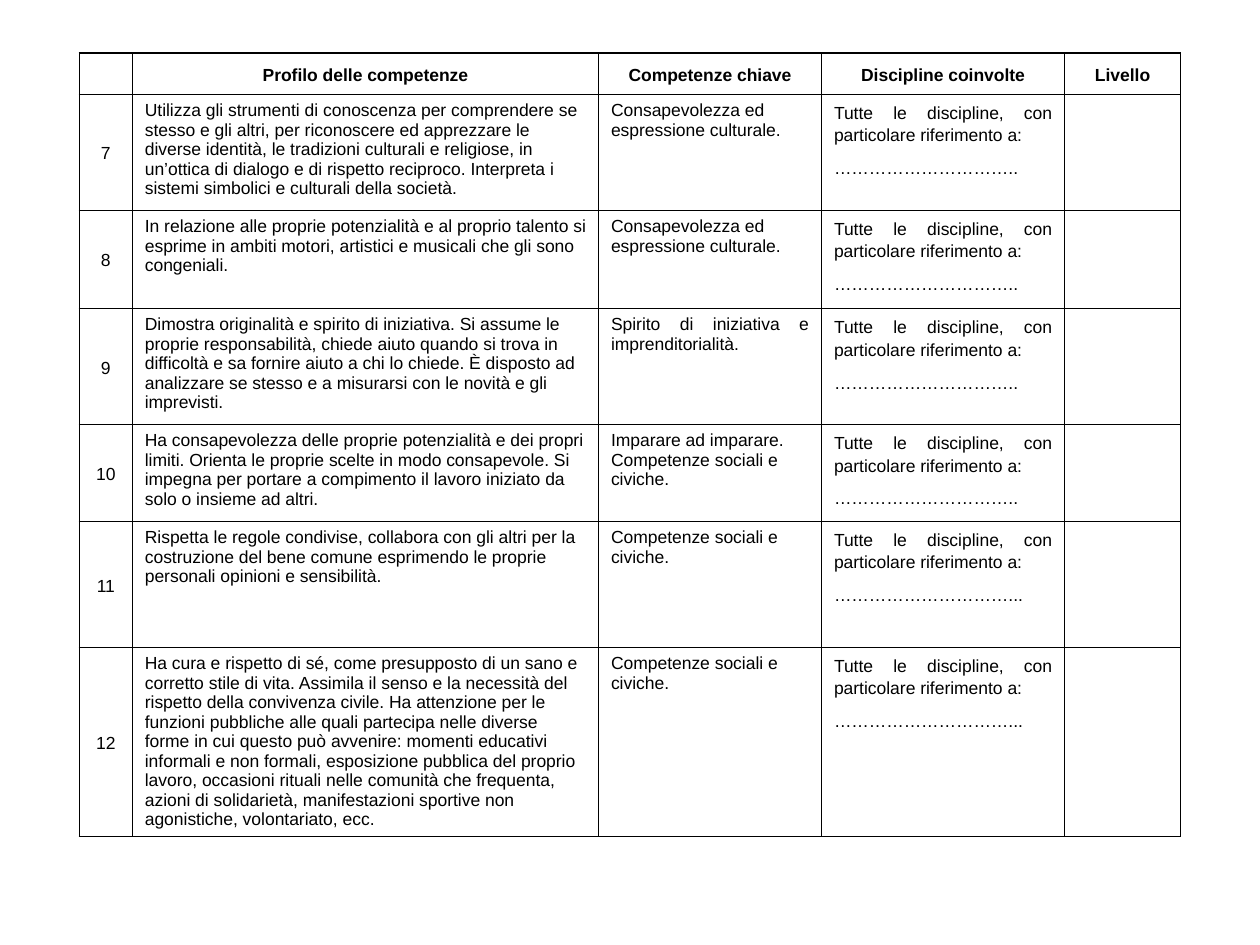
from pptx import Presentation
from pptx.dml.color import RGBColor
from pptx.enum.text import MSO_ANCHOR as ANCHOR, PP_ALIGN as ALIGN
from pptx.oxml.ns import qn
from pptx.util import Inches, Pt
from lxml.etree import SubElement

BLACK = "000000"
COLS = [0.42, 3.7, 1.77, 1.93, 0.92]
ROWS = [0.33, 0.92, 0.78, 0.92, 0.77, 1, 1.5]
HEADERS = ["", "Profilo delle competenze", "Competenze chiave",
           "Discipline coinvolte", "Livello"]
DISCIPLINES = "Tutte le discipline, con particolare riferimento a:"
DOTS = "………………………….."
LONG_DOTS = "…………………………..."
CULTURE = "Consapevolezza ed espressione culturale."
CIVICS = "Competenze sociali e civiche."
FIRST_NUMBER = 7
PROFILES = [
    ("Utilizza gli strumenti di conoscenza per comprendere se stesso e gli altri, "
     "per riconoscere ed apprezzare le diverse identità, le tradizioni culturali e "
     "religiose, in un’ottica di dialogo e di rispetto reciproco. Interpreta i "
     "sistemi simbolici e culturali della società.",
     CULTURE, ALIGN.LEFT, DOTS),
    ("In relazione alle proprie potenzialità e al proprio talento si esprime in "
     "ambiti motori, artistici e musicali che gli sono congeniali.",
     CULTURE, ALIGN.LEFT, DOTS),
    ("Dimostra originalità e spirito di iniziativa. Si assume le proprie "
     "responsabilità, chiede aiuto quando si trova in difficoltà e sa fornire aiuto "
     "a chi lo chiede. È disposto ad analizzare se stesso e a misurarsi con le "
     "novità e gli imprevisti.",
     "Spirito di iniziativa e imprenditorialità.", ALIGN.JUSTIFY, DOTS),
    ("Ha consapevolezza delle proprie potenzialità e dei propri limiti. Orienta le "
     "proprie scelte in modo consapevole. Si impegna per portare a compimento il "
     "lavoro iniziato da solo o insieme ad altri.",
     "Imparare ad imparare. " + CIVICS, ALIGN.LEFT, DOTS),
    ("Rispetta le regole condivise, collabora con gli altri per la costruzione del "
     "bene comune esprimendo le proprie personali opinioni e sensibilità.",
     CIVICS, ALIGN.LEFT, LONG_DOTS),
    ("Ha cura e rispetto di sé, come presupposto di un sano e corretto stile di "
     "vita. Assimila il senso e la necessità del rispetto della convivenza civile. "
     "Ha attenzione per le funzioni pubbliche alle quali partecipa nelle diverse "
     "forme in cui questo può avvenire: momenti educativi informali e non formali, "
     "esposizione pubblica del proprio lavoro, occasioni rituali nelle comunità che "
     "frequenta, azioni di solidarietà, manifestazioni sportive non agonistiche, "
     "volontariato, ecc.",
     CIVICS, ALIGN.LEFT, LONG_DOTS),
]


def rgb(color):
    return RGBColor.from_string(color)


def set_borders(cell, color=BLACK, width=1):
    tc_pr = cell._tc.get_or_add_tcPr()
    for side in ("a:lnL", "a:lnR", "a:lnT", "a:lnB"):
        ln = SubElement(tc_pr, qn(side), w=str(Pt(width)))
        fill = SubElement(ln, qn("a:solidFill"))
        SubElement(fill, qn("a:srgbClr"), val=color)


def write_cell(cell, lines, align=ALIGN.LEFT, spacing=1.0, bold=False,
               anchor=ANCHOR.TOP):
    cell.vertical_anchor = anchor
    tf = cell.text_frame
    tf.text = "\n".join(lines)
    for i, p in enumerate(tf.paragraphs):
        p.alignment = align
        p.line_spacing = spacing
        p.space_before = Pt(6 if i else 0)
        p.font.name = "Arial"
        p.font.size = Pt(10)
        p.font.bold = bold
        p.font.color.rgb = rgb(BLACK)


def write_centred(cell, text, bold=False):
    write_cell(cell, [text], ALIGN.CENTER, 1.15, bold, ANCHOR.MIDDLE)


def add_grid(slide):
    table = slide.shapes.add_table(
        len(ROWS), len(COLS), Inches(0.63), Inches(0.42),
        Inches(sum(COLS)), Inches(sum(ROWS))).table
    table.first_row = table.horz_banding = False
    for column, width in zip(table.columns, COLS):
        column.width = Inches(width)
    for row, height in zip(table.rows, ROWS):
        row.height = Inches(height)
    for cell in table.iter_cells():
        set_borders(cell)
        cell.fill.background()
        cell.margin_top = cell.margin_bottom = Inches(0.05)
    return table


def fill_header(table):
    for cell, text in zip(table.rows[0].cells, HEADERS):
        if text:
            write_centred(cell, text, bold=True)
        else:
            cell.margin_top = cell.margin_bottom = 0


def fill_profiles(table):
    for i, (profile, key, key_align, dots) in enumerate(PROFILES):
        cells = table.rows[i + 1].cells
        write_centred(cells[0], str(FIRST_NUMBER + i))
        write_cell(cells[1], [profile])
        write_cell(cells[2], [key], key_align)
        write_cell(cells[3], [DISCIPLINES, dots], ALIGN.JUSTIFY, 1.15)


def main():
    prs = Presentation()
    prs.slide_width, prs.slide_height = Inches(10), Inches(7.5)
    slide = prs.slides.add_slide(prs.slide_layouts[6])
    table = add_grid(slide)
    fill_header(table)
    fill_profiles(table)
    prs.save("out.pptx")


if __name__ == "__main__":
    main()
